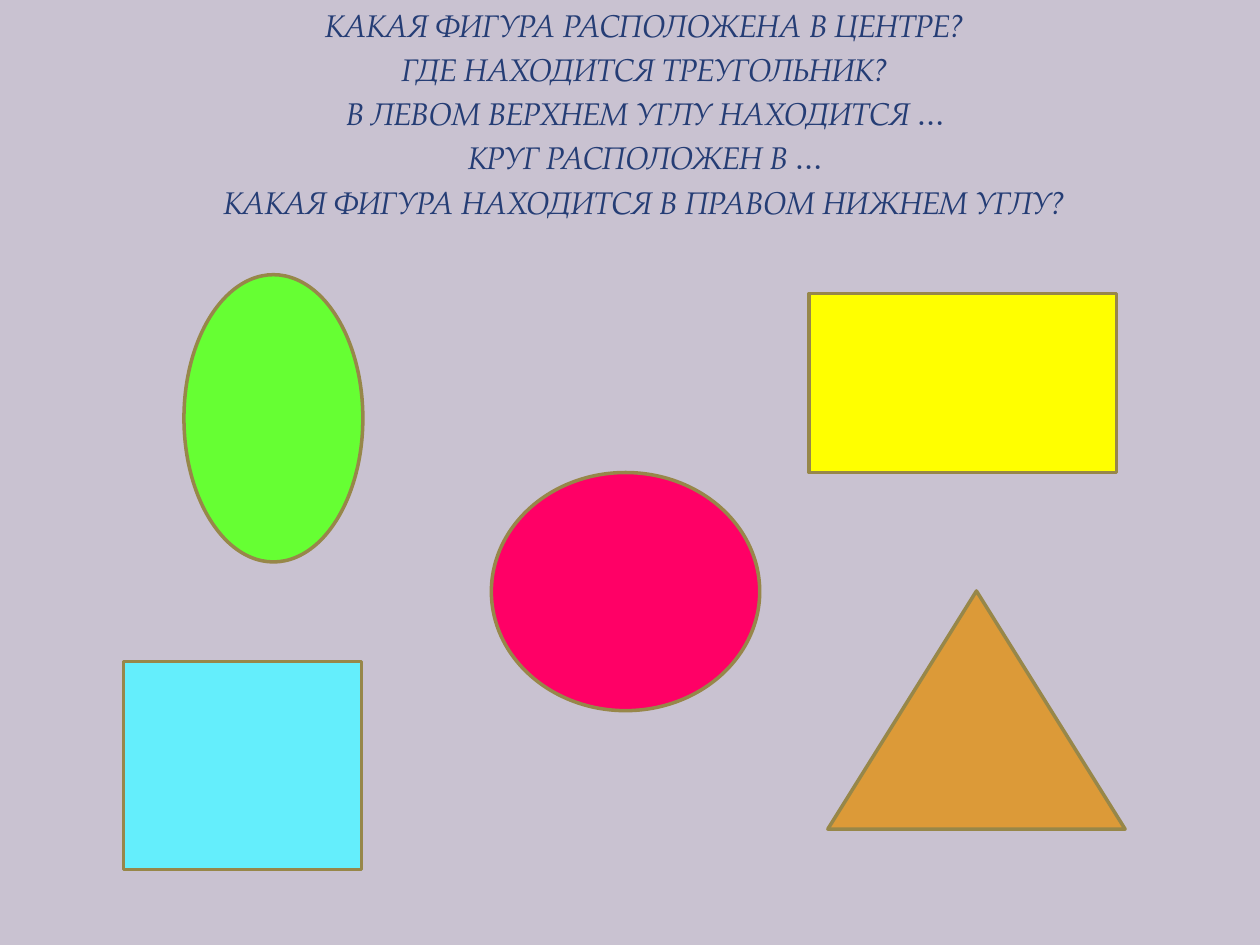
import pptx
import pptx.util
import pptx.dml.color
import pptx.enum.shapes
import pptx.enum.text
from dataclasses import dataclass

Inches = pptx.util.Inches
Pt = pptx.util.Pt
Kind = pptx.enum.shapes.MSO_SHAPE


def tint(code):
    return pptx.dml.color.RGBColor.from_string(code)


@dataclass
class Theme:
    back: str = "C9C2D1"
    ink: str = "253D75"
    edge: str = "978749"
    cyan: str = "64EEFC"
    yellow: str = "FFFF00"
    red: str = "FF0066"
    green: str = "66FF33"
    orange: str = "DC9A38"
    font: str = "TeX Gyre Pagella"
    size: float = 18
    gap: float = 3.6
    width: float = 2


class Page:
    def __init__(self, deck, theme):
        self.theme = theme
        self.slide = deck.slides.add_slide(deck.slide_layouts[6])
        fill = self.slide.background.fill
        fill.solid()
        fill.fore_color.rgb = tint(theme.back)

    def text(self, lines, box):
        frame = self.slide.shapes.add_textbox(*map(Inches, box)).text_frame
        frame.word_wrap = True
        frame.text = "\n".join(lines)
        for num, para in enumerate(frame.paragraphs):
            para.alignment = pptx.enum.text.PP_ALIGN.CENTER
            para._p.get_or_add_pPr().set("marL", str(Inches(0.08)))
            if num:
                para.space_before = Pt(self.theme.gap)
            font = para.font
            font.name = self.theme.font
            font.size = Pt(self.theme.size)
            font.italic = True
            font.color.rgb = tint(self.theme.ink)

    def shape(self, kind, color, box):
        shape = self.slide.shapes.add_shape(kind, *map(Inches, box))
        shape.shadow.inherit = False
        shape.fill.solid()
        shape.fill.fore_color.rgb = tint(color)
        shape.line.color.rgb = tint(self.theme.edge)
        shape.line.width = Pt(self.theme.width)


def main():
    deck = pptx.Presentation()
    deck.slide_width, deck.slide_height = Inches(10), Inches(7.5)
    theme = Theme()
    page = Page(deck, theme)
    page.text([
        "КАКАЯ ФИГУРА РАСПОЛОЖЕНА В ЦЕНТРЕ?",
        "ГДЕ НАХОДИТСЯ ТРЕУГОЛЬНИК?",
        "В ЛЕВОМ ВЕРХНЕМ УГЛУ НАХОДИТСЯ …",
        "КРУГ РАСПОЛОЖЕН В …",
        "КАКАЯ ФИГУРА НАХОДИТСЯ В ПРАВОМ НИЖНЕМ УГЛУ?",
    ], (0.83, 0, 8.5, 1.94))
    for kind, color, box in [
        (Kind.RECTANGLE, theme.cyan, (0.98, 5.25, 1.89, 1.65)),
        (Kind.RECTANGLE, theme.yellow, (6.42, 2.33, 2.44, 1.42)),
        (Kind.OVAL, theme.red, (3.9, 3.75, 2.13, 1.89)),
        (Kind.OVAL, theme.green, (1.46, 2.18, 1.42, 2.28)),
        (Kind.ISOSCELES_TRIANGLE, theme.orange, (6.57, 4.69, 2.36, 1.89)),
    ]:
        page.shape(kind, color, box)
    deck.save("out.pptx")


if __name__ == "__main__":
    main()
